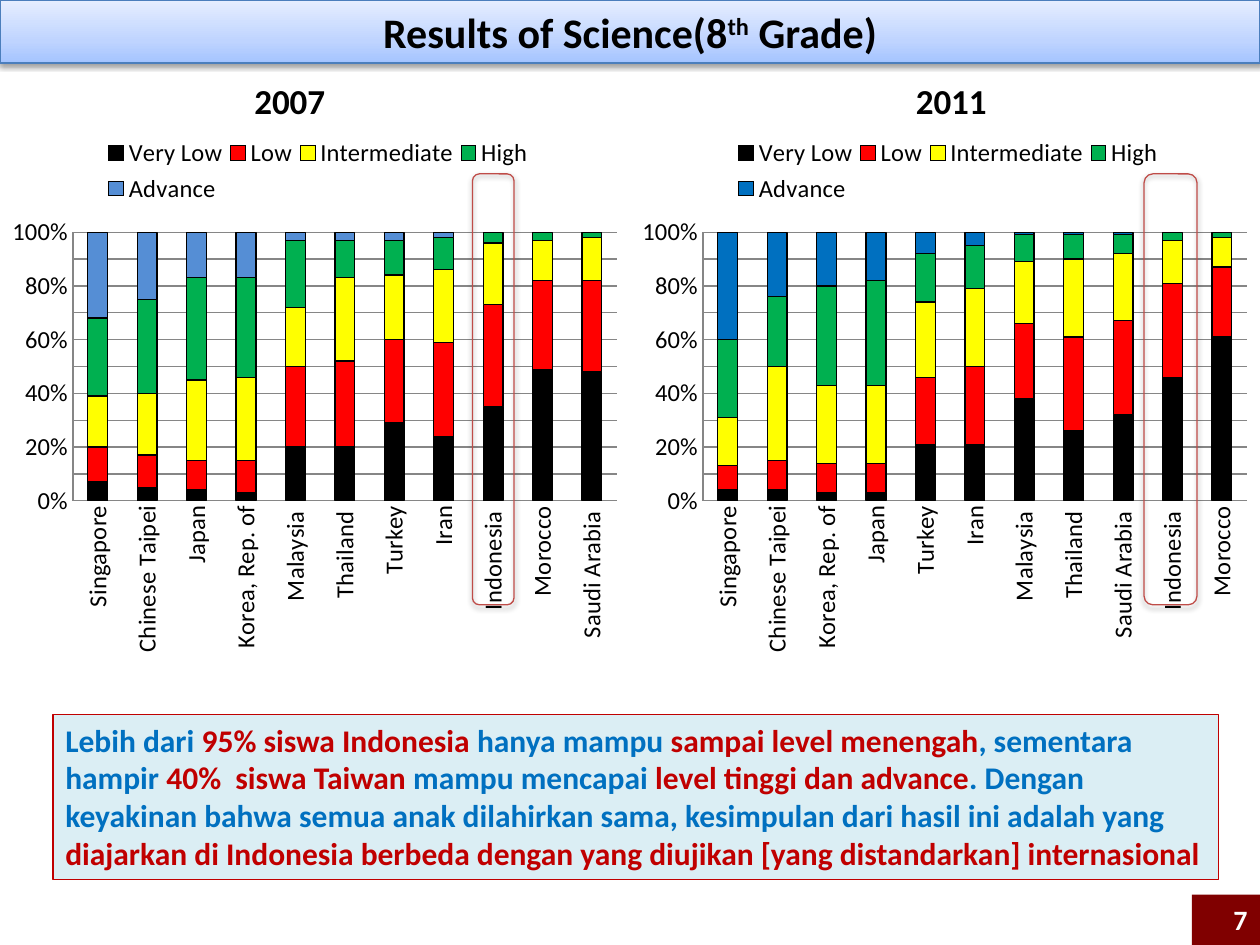
from copy import deepcopy

from lxml.etree import SubElement
from pptx import Presentation
from pptx.chart.data import CategoryChartData
from pptx.dml.color import RGBColor
from pptx.enum.chart import XL_CHART_TYPE, XL_LEGEND_POSITION, XL_TICK_MARK
from pptx.enum.shapes import MSO_SHAPE
from pptx.enum.text import MSO_ANCHOR, PP_ALIGN
from pptx.oxml.ns import qn
from pptx.util import Inches, Pt

FONT = "Calibri"
WIDTH, HEIGHT = 10, 7.5
HALF = WIDTH / 2
BLACK = RGBColor(0, 0, 0)
WHITE = RGBColor(255, 255, 255)
RED = RGBColor(0xFF, 0, 0)
YELLOW = RGBColor(0xFF, 0xFF, 0)
GREEN = RGBColor(0, 0xB0, 0x50)
LIGHT_BLUE = RGBColor(0x55, 0x8E, 0xD5)
BLUE = RGBColor(0, 0x70, 0xC0)
DARK_RED = RGBColor(0xC0, 0, 0)
MAROON = RGBColor(0x80, 0, 0)
PALE_BLUE = RGBColor(0xDB, 0xEE, 0xF4)
GRID_GREY = RGBColor(0x86, 0x86, 0x86)
BANNER_LINE = RGBColor(0x4B, 0x7E, 0xBC)
MARKER_LINE = RGBColor(0xBF, 0x4C, 0x48)
BANNER_STOPS = [(0, RGBColor(0xA4, 0xC4, 0xFF)), (0.35, RGBColor(0xBF, 0xD4, 0xFF)),
                (1, RGBColor(0xE6, 0xEE, 0xFF))]

LEVELS = ["Very Low", "Low", "Intermediate", "High", "Advance"]
LEVEL_COLORS = [BLACK, RED, YELLOW, GREEN]

# Percent of pupils at each level, per country
RESULTS_2007 = {
    "Singapore": (7, 13, 19, 29, 32),
    "Chinese Taipei": (5, 12, 23, 35, 25),
    "Japan": (4, 11, 30, 38, 17),
    "Korea, Rep. of": (3, 12, 31, 37, 17),
    "Malaysia ": (20, 30, 22, 25, 3),
    "Thailand ": (20, 32, 31, 14, 3),
    "Turkey": (29, 31, 24, 13, 3),
    "Iran": (24, 35, 27, 12, 2),
    "Indonesia ": (35, 38, 23, 4, 0),
    "Morocco": (49, 33, 15, 3, 0),
    "Saudi Arabia ": (48, 34, 16, 2, 0),
}
RESULTS_2011 = {
    "Singapore": (4, 9, 18, 29, 40),
    "Chinese Taipei": (4, 11, 35, 26, 24),
    "Korea, Rep. of": (3, 11, 29, 37, 20),
    "Japan": (3, 11, 29, 39, 18),
    "Turkey": (21, 25, 28, 18, 8),
    "Iran": (21, 29, 29, 16, 5),
    "Malaysia ": (38, 28, 23, 10, 1),
    "Thailand ": (26, 35, 29, 9, 1),
    "Saudi Arabia ": (32, 35, 25, 7, 1),
    "Indonesia ": (46, 35, 16, 3, 0),
    "Morocco": (61, 26, 11, 2, 0),
}
SUMMARY = [
    ("Lebih dari ", BLUE), ("95% siswa Indonesia ", DARK_RED),
    ("hanya mampu ", BLUE), ("sampai level menengah", DARK_RED),
    (", sementara hampir ", BLUE), ("40%  siswa Taiwan", DARK_RED),
    (" mampu mencapai ", BLUE), ("level tinggi dan advance", DARK_RED),
    (". Dengan keyakinan bahwa semua anak dilahirkan sama, "
     "kesimpulan dari hasil ini adalah yang ", BLUE),
    ("diajarkan di Indonesia berbeda dengan yang diujikan "
     "[yang distandarkan] internasional", DARK_RED),
]


def place(shape, left, top, width, height):
    shape.left, shape.top = Inches(left), Inches(top)
    shape.width, shape.height = Inches(width), Inches(height)


def add_run(paragraph, text, size, color):
    run = paragraph.add_run()
    run.text = text
    font = run.font
    font.name, font.size, font.bold = FONT, Pt(size), True
    font.color.rgb = color
    return run


def outline(target, color):
    target.line.color.rgb = color
    target.line.width = Pt(0.75)


def add_soft_shadow(shape):
    shape.shadow.inherit = False
    effects = shape._element.spPr.find(qn("a:effectLst"))
    shadow = SubElement(effects, qn("a:outerShdw"), blurRad=str(Pt(3.1)),
                        dist=str(Pt(1.6)), dir="5400000", rotWithShape="0")
    color = SubElement(shadow, qn("a:srgbClr"), val=str(BLACK))
    SubElement(color, qn("a:alpha"), val="38000")


def add_box(slide, preset, box, fill=None):
    shape = slide.shapes.add_shape(preset, *map(Inches, box))
    shape.shadow.inherit = False
    if fill is None:
        shape.fill.background()
    else:
        shape.fill.solid()
        shape.fill.fore_color.rgb = fill
    return shape


def add_banner(slide):
    banner = slide.shapes.title
    place(banner, 0, 0, WIDTH, 0.5)
    banner.fill.gradient()
    banner.fill.gradient_angle = 90
    stops = banner._element.spPr.find(qn("a:gradFill")).find(qn("a:gsLst"))
    stops.append(deepcopy(stops[0]))
    for stop, (position, color) in zip(banner.fill.gradient_stops, BANNER_STOPS):
        stop.position = position
        stop.color.rgb = color
    outline(banner, BANNER_LINE)
    add_soft_shadow(banner)
    banner.text_frame.vertical_anchor = MSO_ANCHOR.MIDDLE
    heading = banner.text_frame.paragraphs[0]
    heading.alignment = PP_ALIGN.CENTER
    add_run(heading, "Results of Science(8", 24, BLACK)
    ordinal = add_run(heading, "th", 24, BLACK)
    ordinal._r.get_or_add_rPr().set("baseline", "30000")
    add_run(heading, " Grade)", 24, BLACK)


def set_layout(part, x, y, w, h, inner=False):
    """Fix a chart part at shares of the chart's size."""
    layout = part.find(qn("c:layout"))
    if layout is None:
        layout = part.makeelement(qn("c:layout"), {})
        if inner:
            part.insert(0, layout)
        else:
            part.find(qn("c:legendPos")).addnext(layout)
    manual = SubElement(layout, qn("c:manualLayout"))
    settings = [("layoutTarget", "inner")] if inner else []
    settings += [("xMode", "edge"), ("yMode", "edge"), ("x", x), ("y", y), ("w", w), ("h", h)]
    for tag, value in settings:
        SubElement(manual, qn(f"c:{tag}"), val=str(value))


def add_results_chart(slide, left, results, advance_color):
    data = CategoryChartData(number_format="0%")
    data.categories = list(results)
    for level, shares in zip(LEVELS, zip(*results.values())):
        data.add_series(level, [share / 100 for share in shares])
    chart = slide.shapes.add_chart(
        XL_CHART_TYPE.COLUMN_STACKED, Inches(left), Inches(0.97),
        Inches(HALF), Inches(4.3), data).chart
    chart.has_title = False
    chart.font.name, chart.font.size = FONT, Pt(14)
    chart.font.color.rgb = BLACK
    chart.has_legend = True
    chart.legend.position = XL_LEGEND_POSITION.TOP
    chart.legend.include_in_layout = False

    plot = chart.plots[0]
    plot.gap_width, plot.overlap, plot.vary_by_categories = 150, 100, False
    for series, color in zip(plot.series, LEVEL_COLORS + [advance_color]):
        series.format.fill.solid()
        series.format.fill.fore_color.rgb = color
        outline(series.format, BLACK)

    shares, countries = chart.value_axis, chart.category_axis
    shares.minimum_scale, shares.maximum_scale, shares.major_unit = 0, 1, 0.1
    shares.tick_labels.number_format = "0%"
    shares.tick_labels.number_format_is_linked = False
    for line in (shares.major_gridlines, shares, countries):
        line.format.line.color.rgb = GRID_GREY
        line.format.line.width = Pt(0.75)
    for axis in (shares, countries):
        axis.major_tick_mark = axis.minor_tick_mark = XL_TICK_MARK.NONE
    countries.tick_labels.font.size = Pt(14)
    label_body = countries._element.find(qn("c:txPr")).find(qn("a:bodyPr"))
    label_body.set("rot", "-5400000")
    label_body.set("vert", "horz")

    plot_area = chart._chartSpace.chart.plotArea
    set_layout(plot_area, 0.116, 0.203, 0.863, 0.496, inner=True)
    set_layout(chart.legend._element, 0.16, 0.02, 0.69, 0.14)


def add_year(slide, left, year):
    label = slide.shapes.add_textbox(*map(Inches, (left, 0.58, 0.77, 0.44)))
    label.text_frame.word_wrap = False
    add_run(label.text_frame.paragraphs[0], year, 20, BLACK)


def add_country_marker(slide, left, width):
    marker = add_box(slide, MSO_SHAPE.ROUNDED_RECTANGLE, (left, 1.38, width, 3.42))
    outline(marker, MARKER_LINE)
    add_soft_shadow(marker)


def add_summary(slide):
    summary = add_box(slide, MSO_SHAPE.RECTANGLE, (0.42, 5.67, 9.25, 1.31), PALE_BLUE)
    outline(summary, DARK_RED)
    summary.text_frame.vertical_anchor = MSO_ANCHOR.TOP
    paragraph = summary.text_frame.paragraphs[0]
    paragraph.alignment = PP_ALIGN.LEFT
    for text, color in SUMMARY:
        add_run(paragraph, text, 18, color)


def add_page_number(slide, number):
    width, height = 0.54, 0.4
    corner = add_box(slide, MSO_SHAPE.RECTANGLE,
                     (WIDTH - width, HEIGHT - height, width, height), MAROON)
    corner.line.fill.background()
    paragraph = corner.text_frame.paragraphs[0]
    paragraph.alignment = PP_ALIGN.RIGHT
    add_run(paragraph, number, 16, WHITE)


def main():
    deck = Presentation()
    deck.slide_width, deck.slide_height = Inches(WIDTH), Inches(HEIGHT)
    slide = deck.slides.add_slide(deck.slide_layouts[5])
    add_results_chart(slide, 0, RESULTS_2007, LIGHT_BLUE)
    add_results_chart(slide, HALF, RESULTS_2011, BLUE)
    add_banner(slide)
    add_country_marker(slide, 3.75, 0.33)
    add_country_marker(slide, 9.08, 0.42)
    add_year(slide, 1.92, "2007")
    add_year(slide, 7.17, "2011")
    add_summary(slide)
    add_page_number(slide, "7")
    deck.save("out.pptx")


if __name__ == "__main__":
    main()
